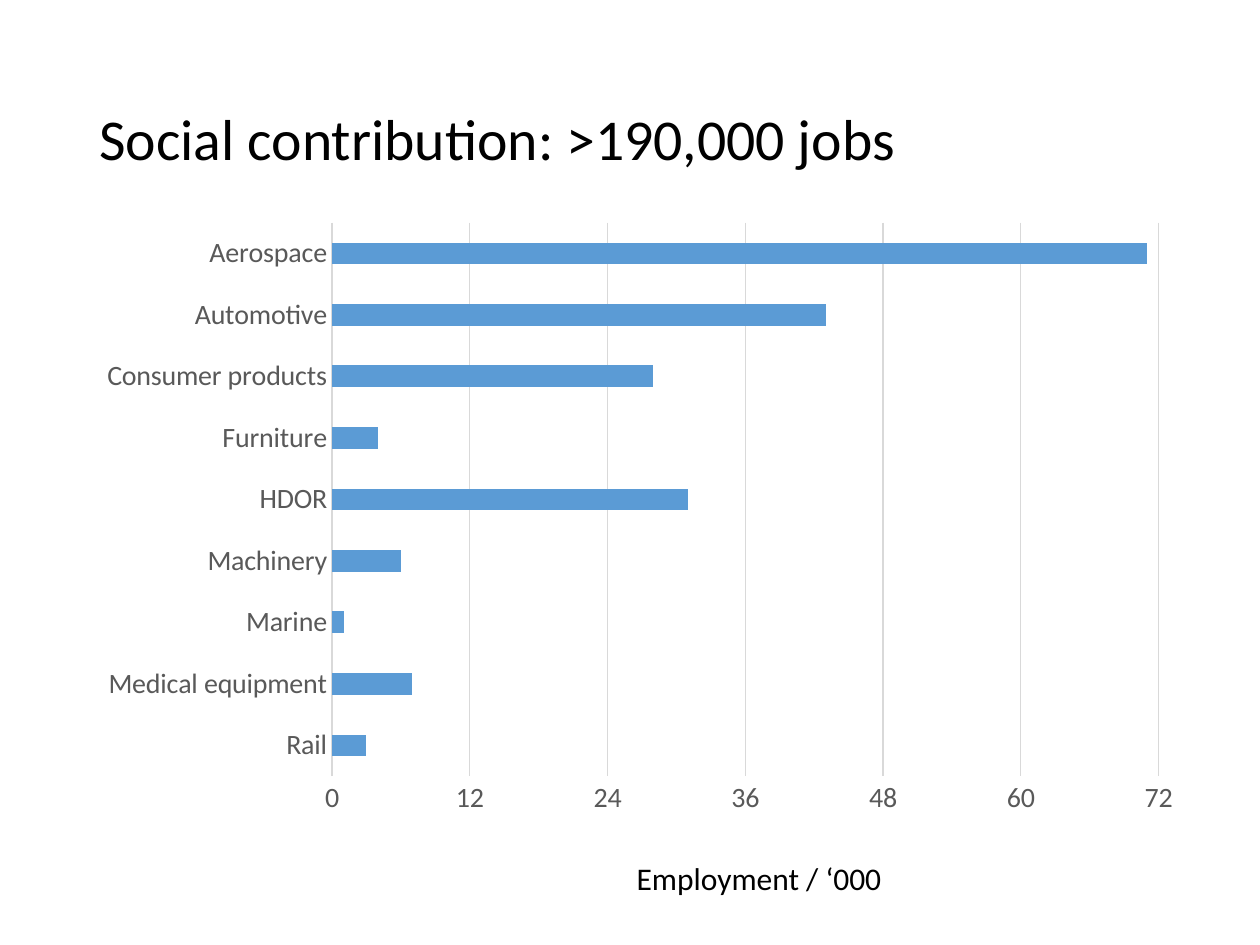
from dataclasses import dataclass

from lxml import etree
from pptx import Presentation
from pptx.chart.data import CategoryChartData
from pptx.dml.color import RGBColor
from pptx.enum.chart import XL_CHART_TYPE, XL_TICK_MARK
from pptx.enum.text import MSO_ANCHOR, PP_ALIGN
from pptx.oxml import parse_xml
from pptx.util import Emu, Pt

BAR_CLUSTERED = XL_CHART_TYPE.BAR_CLUSTERED
NO_TICK = XL_TICK_MARK.NONE
MIDDLE, TOP = MSO_ANCHOR.MIDDLE, MSO_ANCHOR.TOP
LEFT, CENTER = PP_ALIGN.LEFT, PP_ALIGN.CENTER

PX = 914400 / 126
FONT = "Calibri"
BLACK, GREY, PALE_GREY, BLUE = "000000", "595959", "D9D9D9", "5B9BD5"
CHART_NS = "http://schemas.openxmlformats.org/drawingml/2006/chart"

JOBS = {
    "Rail": 3,
    "Medical equipment": 7,
    "Marine": 1,
    "Machinery": 6,
    "HDOR": 31,
    "Furniture": 4,
    "Consumer products": 28,
    "Automotive": 43,
    "Aerospace": 71,
}
PLOT_AREA = {"x": 0.26, "y": 0.03, "w": 0.7, "h": 0.8}


@dataclass
class Box:
    left: int
    top: int
    width: int
    height: int

    def emu(self) -> list[Emu]:
        return [Emu(round(length * PX)) for length in
                (self.left, self.top, self.width, self.height)]


@dataclass
class Label:
    text: str
    box: Box
    size: int
    align: PP_ALIGN
    anchor: MSO_ANCHOR
    line_spacing: float = 1.0


LABELS = [
    Label("Social contribution: >190,000 jobs", Box(87, 50, 1086, 183), 33, LEFT, MIDDLE, 0.9),
    Label("Employment / ‘000", Box(585, 853, 348, 50), 18, CENTER, TOP),
]
CHART_BOX = Box(25, 202, 1181, 692)


def color(value: str) -> RGBColor:
    return RGBColor.from_string(value)


def set_values(target, values: dict) -> None:
    for name, value in values.items():
        setattr(target, name, value)


def set_font(font, size: int, fill: str) -> None:
    set_values(font, {"name": FONT, "size": Pt(size), "bold": False})
    font.color.rgb = color(fill)


def set_line(line) -> None:
    line.color.rgb = color(PALE_GREY)
    line.width = Pt(0.75)


def add_label(slide, label: Label) -> None:
    frame = slide.shapes.add_textbox(*label.box.emu()).text_frame
    set_values(frame, {"word_wrap": True, "vertical_anchor": label.anchor})
    paragraph = frame.paragraphs[0]
    set_values(paragraph, {"alignment": label.align, "line_spacing": label.line_spacing})
    run = paragraph.add_run()
    run.text = label.text
    set_font(run.font, label.size, BLACK)


def set_plot_area(chart, area: dict[str, float]) -> None:
    """Fix the inner plot area as fractions of the chart."""
    plot_area = chart.plots[0]._element.getparent()
    for old_layout in plot_area.findall(f"{{{CHART_NS}}}layout"):
        plot_area.remove(old_layout)
    layout = parse_xml(f'<c:layout xmlns:c="{CHART_NS}"><c:manualLayout>'
                       '<c:layoutTarget val="inner"/><c:xMode val="edge"/>'
                       '<c:yMode val="edge"/></c:manualLayout></c:layout>')
    for name, value in area.items():
        etree.SubElement(layout[0], f"{{{CHART_NS}}}{name}").set("val", str(value))
    plot_area.insert(0, layout)


def add_jobs_chart(slide, jobs: dict[str, int], box: Box) -> None:
    data = CategoryChartData()
    data.categories = list(jobs)
    data.add_series("Series 1", list(jobs.values()))
    chart = slide.shapes.add_chart(BAR_CLUSTERED, *box.emu(), data).chart
    set_values(chart, {"has_legend": False, "has_title": False})
    set_font(chart.font, 16, BLACK)
    set_plot_area(chart, PLOT_AREA)

    # Bars
    plot = chart.plots[0]
    set_values(plot, {"gap_width": 182, "vary_by_categories": False})
    fill = plot.series[0].format.fill
    fill.solid()
    fill.fore_color.rgb = color(BLUE)

    # Axes
    for axis in (chart.category_axis, chart.value_axis):
        set_values(axis, {"major_tick_mark": NO_TICK, "minor_tick_mark": NO_TICK})
        set_font(axis.tick_labels.font, 16, GREY)
    set_line(chart.category_axis.format.line)
    value_axis = chart.value_axis
    set_values(value_axis, {"minimum_scale": 0, "maximum_scale": 72,
                            "major_unit": 12, "has_major_gridlines": True})
    set_values(value_axis.tick_labels, {"number_format": "#,##0",
                                        "number_format_is_linked": False})
    value_axis.format.line.fill.background()
    set_line(value_axis.major_gridlines.format.line)


def main() -> None:
    presentation = Presentation()
    presentation.slide_width = Emu(round(1260 * PX))
    presentation.slide_height = Emu(round(945 * PX))
    slide = presentation.slides.add_slide(presentation.slide_layouts[6])
    add_jobs_chart(slide, JOBS, CHART_BOX)
    for label in LABELS:
        add_label(slide, label)
    presentation.save("out.pptx")


if __name__ == "__main__":
    main()
